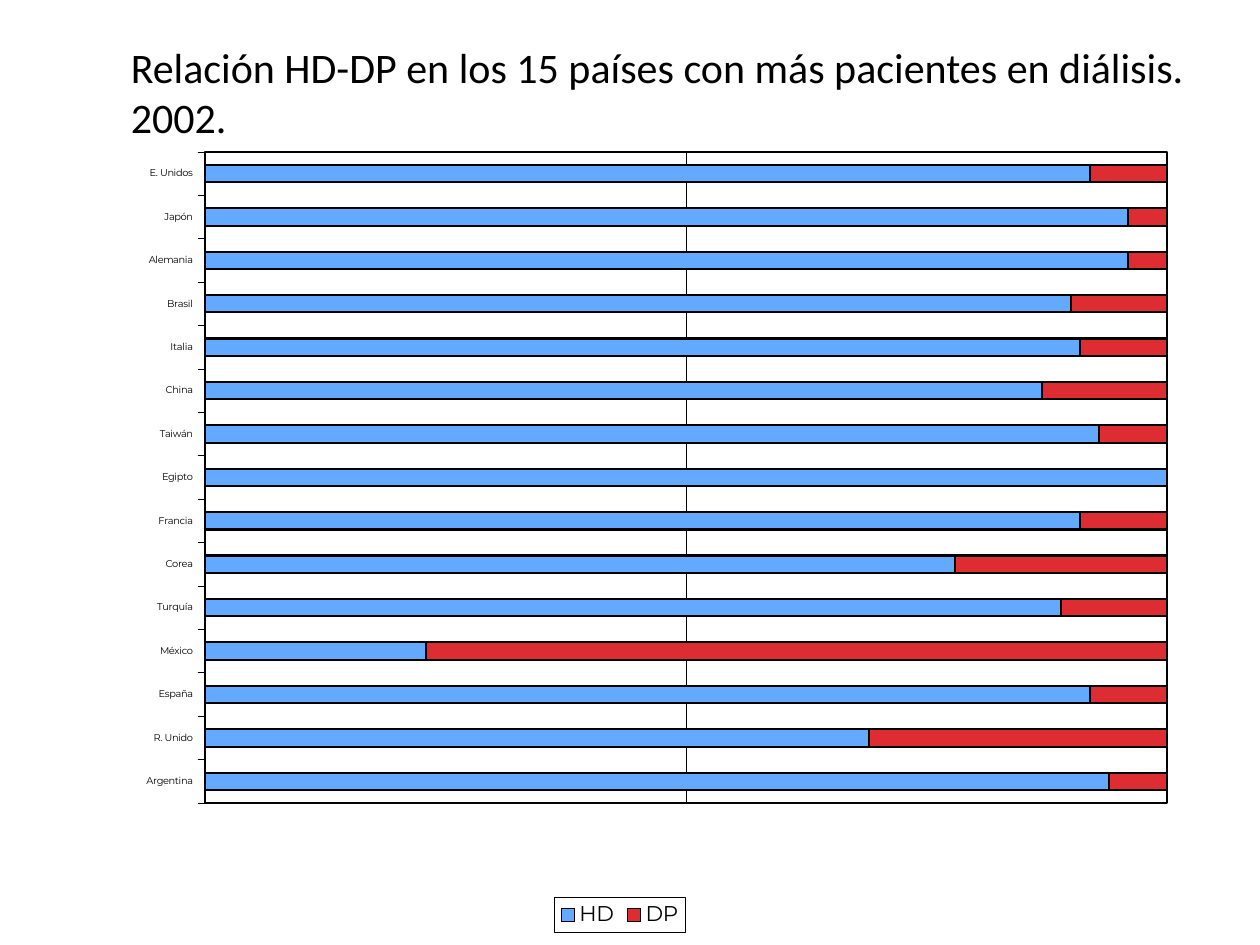
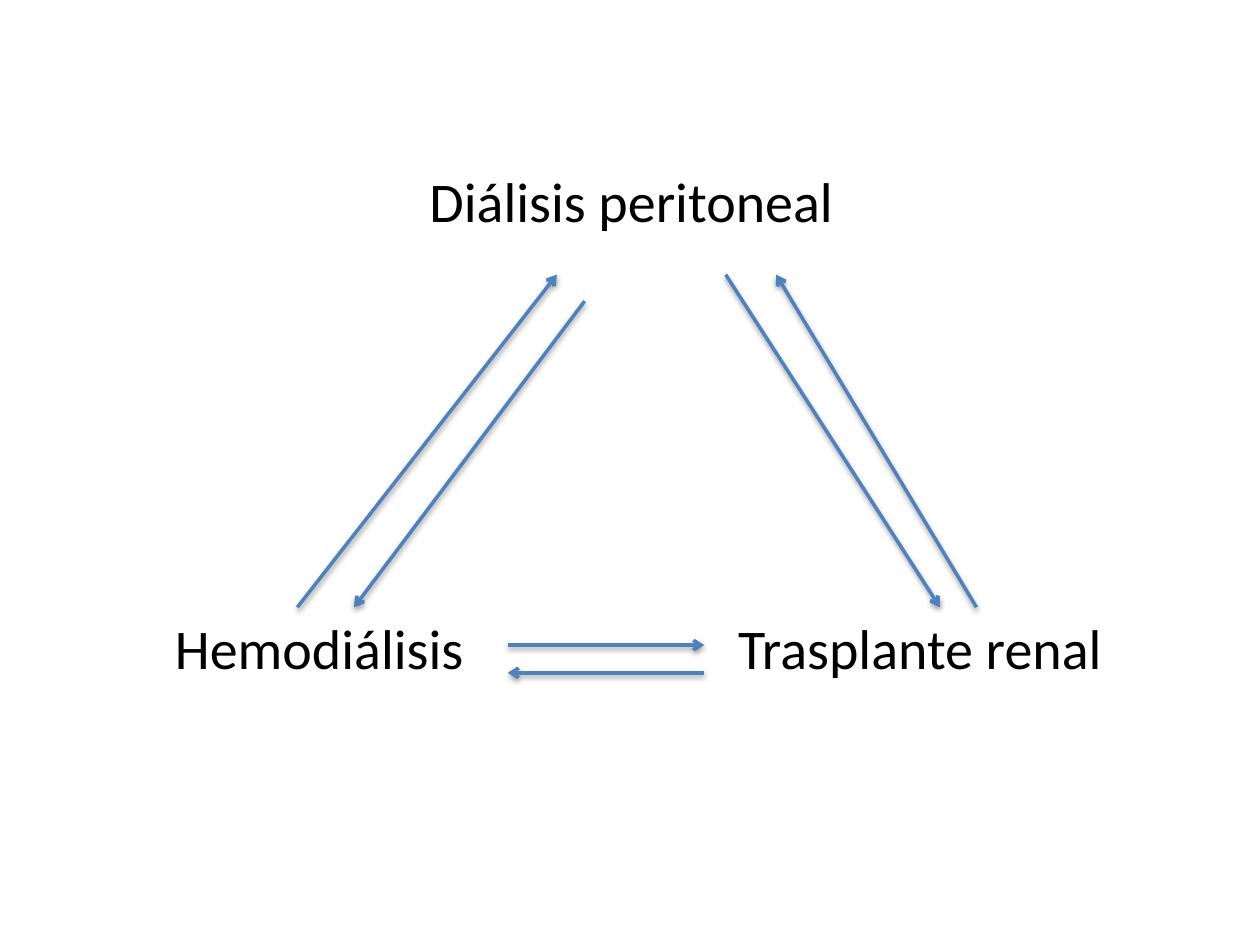
import dataclasses

import pptx
import pptx.chart.data
import pptx.dml.color
import pptx.enum.chart
import pptx.enum.shapes
import pptx.enum.text
import pptx.oxml
import pptx.oxml.ns
import pptx.util

EMU_PER_PX = 9144  # 100 px to the inch


@dataclasses.dataclass(frozen=True)
class Theme:
    ink: str = "000000"
    hemodialysis: str = "63AAFE"
    peritoneal: str = "DD2D32"
    arrow: str = "4F81BD"
    text_font: str = "Calibri"
    chart_font: str = "Montserrat"
    title_size: float = 24
    node_size: float = 32
    chart_size: float = 13.3
    category_size: float = 5.6
    legend_size: float = 12.2
    hairline: float = 0.3
    bar_line: float = 1.18
    arrow_line: float = 2


def px(length):
    return pptx.util.Emu(length * EMU_PER_PX)


def xml(text):
    namespaces = pptx.oxml.ns.nsdecls("a", "c")
    head, rest = text.split(">", 1)
    closing = "/" if head.endswith("/") else ""
    return pptx.oxml.parse_xml(f"{head.rstrip('/')} {namespaces}{closing}>{rest}")


class Deck:
    def __init__(self, theme):
        self.theme = theme
        self.presentation = pptx.Presentation()
        self.presentation.slide_width = px(1000)
        self.presentation.slide_height = px(750)
        self.slide = None

    def add_slide(self):
        self.slide = self.presentation.slides.add_slide(self.presentation.slide_layouts[6])

    def style_font(self, font, name, size):
        font.name = name
        font.size = pptx.util.Pt(size)
        font.color.rgb = pptx.dml.color.RGBColor.from_string(self.theme.ink)

    def style_line(self, line, color, width):
        line.color.rgb = pptx.dml.color.RGBColor.from_string(color)
        line.width = pptx.util.Pt(width)

    def add_text(self, lines, box, size, wrap=True):
        frame = self.slide.shapes.add_textbox(*map(px, box)).text_frame
        frame.word_wrap = wrap
        frame.auto_size = pptx.enum.text.MSO_AUTO_SIZE.SHAPE_TO_FIT_TEXT
        frame.text = "\n".join(lines)
        for paragraph in frame.paragraphs:
            self.style_font(paragraph.font, self.theme.text_font, size)

    def add_arrow(self, start, end):
        connector = self.slide.shapes.add_connector(
            pptx.enum.shapes.MSO_CONNECTOR.STRAIGHT, *map(px, start + end))
        self.style_line(connector.line, self.theme.arrow, self.theme.arrow_line)
        connector.line._get_or_add_ln().append(xml('<a:tailEnd type="arrow"/>'))
        connector.element.spPr.append(xml(
            '<a:effectLst><a:outerShdw blurRad="40000" dist="20000" dir="5400000"'
            ' rotWithShape="0"><a:srgbClr val="000000"><a:alpha val="38000"/>'
            '</a:srgbClr></a:outerShdw></a:effectLst>'))

    def add_share_chart(self, categories, series, box, plot_box):
        theme = self.theme
        data = pptx.chart.data.CategoryChartData()
        data.categories = categories
        for name, values, _ in series:
            data.add_series(name, values)
        chart = self.slide.shapes.add_chart(
            pptx.enum.chart.XL_CHART_TYPE.BAR_STACKED_100, *map(px, box), data).chart
        chart.has_title = False
        self.style_font(chart.font, theme.chart_font, theme.chart_size)

        # Bars
        plot = chart.plots[0]
        plot.gap_width, plot.overlap = 150, 100
        for bars, (_, _, color) in zip(plot.series, series):
            bars.format.fill.solid()
            bars.format.fill.fore_color.rgb = pptx.dml.color.RGBColor.from_string(color)
            self.style_line(bars.format.line, theme.ink, theme.bar_line)

        # Axes
        category_axis, value_axis = chart.category_axis, chart.value_axis
        category_axis.major_tick_mark = pptx.enum.chart.XL_TICK_MARK.OUTSIDE
        self.style_font(category_axis.tick_labels.font, theme.chart_font, theme.category_size)
        self.style_line(category_axis.format.line, theme.ink, theme.hairline)
        value_axis.minimum_scale, value_axis.maximum_scale = 0, 1
        value_axis.major_unit = 0.5
        value_axis.has_major_gridlines = True
        self.style_line(value_axis.major_gridlines.format.line, theme.ink, theme.hairline)
        value_axis.visible = False

        # Legend
        chart.has_legend = True
        chart.legend.position = pptx.enum.chart.XL_LEGEND_POSITION.BOTTOM
        chart.legend.include_in_layout = False
        self.style_font(chart.legend.font, theme.chart_font, theme.legend_size)
        legend_text = chart.element.find(".//" + pptx.oxml.ns.qn("c:legend")).find(
            pptx.oxml.ns.qn("c:txPr"))
        legend_text.addprevious(self.frame_properties(theme.hairline))

        # Plot area place and frame
        plot_area = chart.element.find(".//" + pptx.oxml.ns.qn("c:plotArea"))
        for layout in plot_area.findall(pptx.oxml.ns.qn("c:layout")):
            plot_area.remove(layout)
        places = "".join(f'<c:{key} val="{value}"/>'
                         for key, value in zip("xywh", plot_box))
        plot_area.insert(0, xml(
            '<c:layout><c:manualLayout><c:layoutTarget val="inner"/>'
            '<c:xMode val="edge"/><c:yMode val="edge"/>'
            f'{places}</c:manualLayout></c:layout>'))
        plot_area.append(self.frame_properties(theme.bar_line))

    def frame_properties(self, width):
        return xml(f'<c:spPr><a:noFill/><a:ln w="{pptx.util.Pt(width)}"><a:solidFill>'
                   f'<a:srgbClr val="{self.theme.ink}"/></a:solidFill></a:ln></c:spPr>')


def add_country_slide(deck):
    countries = ["Argentina", "R. Unido", "España", "México", "Turquía", "Corea",
                 "Francia", "Egipto", "Taiwán", "China", "Italia", "Brasil",
                 "Alemania", "Japón", "E. Unidos"]
    hemodialysis = [94, 69, 92, 23, 89, 78, 91, 100, 93, 87, 91, 90, 96, 96, 92]
    peritoneal = [100 - share or None for share in hemodialysis]
    deck.add_slide()
    deck.add_share_chart(
        countries,
        [("HD", hemodialysis, deck.theme.hemodialysis),
         ("DP", peritoneal, deck.theme.peritoneal)],
        box=(36, 92, 912, 648), plot_box=(0.139, 0.044, 0.837, 0.798))
    deck.add_text(["Relación HD-DP en los 15 países con más pacientes en diálisis.", "2002."],
                  (94, 28, 866, 91), deck.theme.title_size, wrap=False)


def add_treatment_slide(deck):
    deck.add_slide()
    treatments = [("Diálisis peritoneal", 331, 127, 341),
                  ("Hemodiálisis", 129, 482, 261),
                  ("Trasplante renal", 576, 482, 341)]
    for name, left, top, width in treatments:
        deck.add_text([name], (left, top, width, 64), deck.theme.node_size)

    # One arrow each way between every two treatments
    upper, lower = 218, 482
    arrows = [((576, upper), (746, lower)), ((775, lower), (616, upper)),
              ((403, 512), (559, 512)), ((559, 534), (403, 534)),
              ((236, lower), (442, upper)), ((464, 239), (281, lower))]
    for start, end in arrows:
        deck.add_arrow(start, end)


def main():
    deck = Deck(Theme())
    add_country_slide(deck)
    add_treatment_slide(deck)
    deck.presentation.save("out.pptx")


if __name__ == "__main__":
    main()
